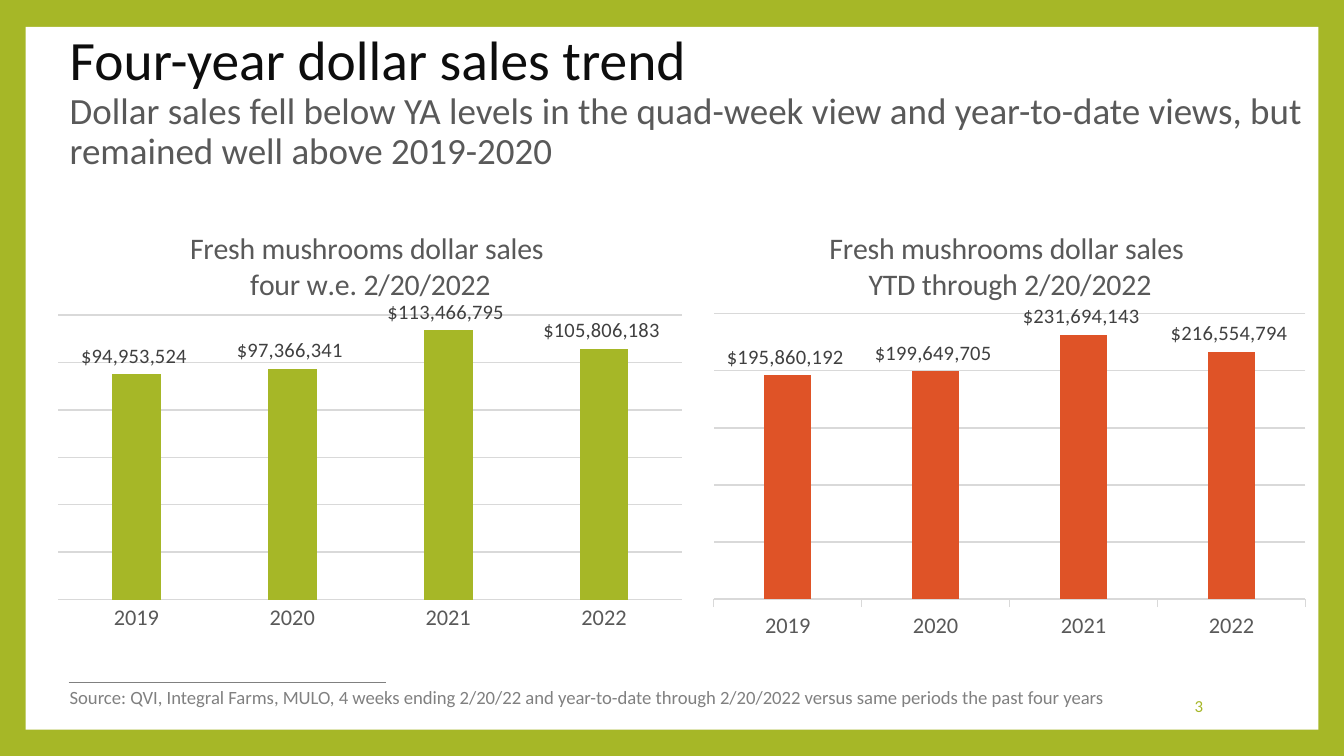
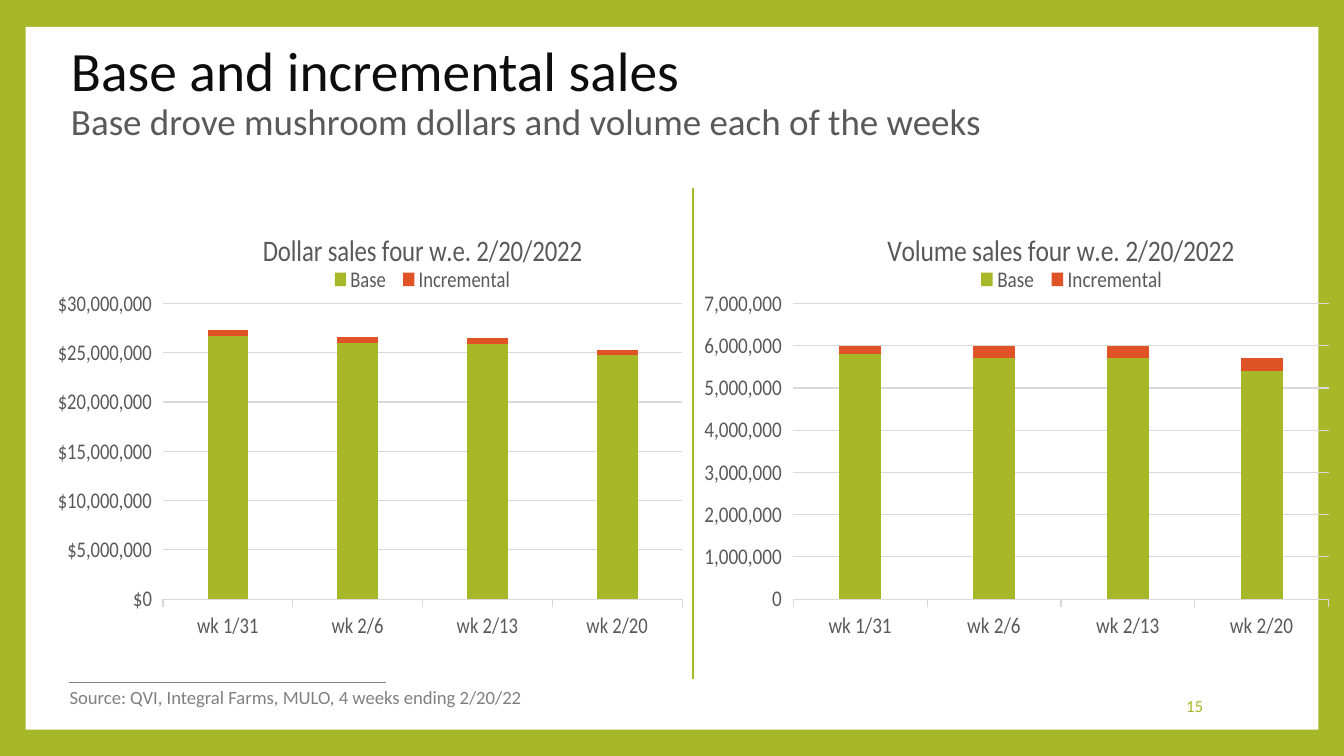
from lxml.etree import SubElement
from pptx import Presentation
from pptx.chart.data import CategoryChartData
from pptx.dml.color import RGBColor
from pptx.enum.chart import XL_CHART_TYPE as ChartType
from pptx.enum.chart import XL_LABEL_POSITION as LabelPosition
from pptx.enum.chart import XL_LEGEND_POSITION as LegendPosition
from pptx.enum.chart import XL_TICK_MARK as TickMark
from pptx.enum.shapes import MSO_CONNECTOR as Connector
from pptx.enum.shapes import MSO_SHAPE as Preset
from pptx.enum.text import MSO_ANCHOR as Anchor
from pptx.enum.text import MSO_AUTO_SIZE as AutoSize
from pptx.enum.text import PP_ALIGN as Align
from pptx.oxml import parse_xml
from pptx.oxml.ns import nsdecls, qn
from pptx.util import Emu, Pt

EMU_PER_PX = 4572  # 200 px to the inch
FONT = "Calibri"
COLORS = {
    "green": "A6B727",
    "orange": "DF5327",
    "white": "FFFFFF",
    "heading": "0D0D0D",
    "text": "595959",
    "label": "404040",
    "source": "808080",
    "grid": "D9D9D9",
}
CHART_TOP, CHART_HEIGHT = 310, 662
DOLLARS = '"$"#,##0_);[Red]\\("$"#,##0\\)'
YEARS = ["2019", "2020", "2021", "2022"]
WEEKS = ["wk 1/31", "wk 2/6", "wk 2/13", "wk 2/20"]


def px(length):
    return Emu(length * EMU_PER_PX)


def rgb(name):
    return RGBColor.from_string(COLORS[name])


def style_font(font, size, color):
    font.name = FONT
    font.size = Pt(size)
    font.bold = False
    font.color.rgb = rgb(color)


def style_line(line, color, width):
    line.color.rgb = rgb(color)
    line.width = Pt(width)


def manual_layout(box, inner=False):
    """Return a layout element that places a chart part by fractions of the chart."""
    layout = parse_xml(f"<c:layout {nsdecls('c')}/>")
    manual = SubElement(layout, qn("c:manualLayout"))
    settings = [("layoutTarget", "inner")] if inner else []
    settings += [("xMode", "edge"), ("yMode", "edge"), *zip("xywh", box)]
    for tag, value in settings:
        SubElement(manual, qn(f"c:{tag}")).set("val", str(value))
    return layout


def set_plot_layout(chart, box):
    """Place the inner plot area and clear the chart background."""
    plot_area = chart.element.find(".//" + qn("c:plotArea"))
    for layout in plot_area.findall(qn("c:layout")):
        plot_area.remove(layout)
    plot_area.insert(0, manual_layout(box, inner=True))
    chart.element.find(qn("c:chart")).addnext(
        parse_xml(f"<c:spPr {nsdecls('c', 'a')}><a:noFill/><a:ln><a:noFill/></a:ln></c:spPr>"))


def set_legend_layout(chart, box):
    legend = chart.element.find(".//" + qn("c:legend"))
    for layout in legend.findall(qn("c:layout")):
        legend.remove(layout)
    legend.find(qn("c:legendPos")).addnext(manual_layout(box))


class Deck:
    """Holds the shared style and the slide being filled."""

    def __init__(self):
        self.presentation = Presentation()
        self.presentation.slide_width = px(2000)
        self.presentation.slide_height = px(1125)
        self.slide = None

    def add_slide(self, number, heading, subheading, source, title_box, source_width):
        self.slide = self.presentation.slides.add_slide(self.presentation.slide_layouts[6])
        background = self.slide.background.fill
        background.solid()
        background.fore_color.rgb = rgb("green")
        self.panel(38, 40, 1924, 1046)
        self.line((102, 1016), (574, 1016), "source")
        self.title(title_box, heading, subheading)
        self.text((1530, 1021, 280, 60), str(number), 9, "green", Align.RIGHT, Anchor.MIDDLE)
        note = self.text((84, 1011, source_width, 54), source, 10, "source")
        note.word_wrap = False
        note.auto_size = AutoSize.SHAPE_TO_FIT_TEXT

    def panel(self, left, top, width, height):
        shape = self.slide.shapes.add_shape(
            Preset.RECTANGLE, px(left), px(top), px(width), px(height))
        shape.shadow.inherit = False
        shape.fill.solid()
        shape.fill.fore_color.rgb = rgb("white")
        shape.line.fill.background()

    def line(self, start, end, color):
        connector = self.slide.shapes.add_connector(
            Connector.STRAIGHT, *map(px, start + end))
        style_line(connector.line, color, 0.79)
        SubElement(connector.element.spPr, qn("a:effectLst"))

    def text(self, box, text, size, color, align=Align.LEFT, anchor=Anchor.TOP):
        text_frame = self.slide.shapes.add_textbox(*map(px, box)).text_frame
        text_frame.word_wrap = True
        text_frame.vertical_anchor = anchor
        text_frame.text = text
        paragraph = text_frame.paragraphs[0]
        paragraph.alignment = align
        for run in paragraph.runs:
            style_font(run.font, size, color)
        return text_frame

    def title(self, box, heading, subheading):
        text_frame = self.text(box, f"{heading}\v{subheading}", 19.8, "text",
                               anchor=Anchor.MIDDLE)
        paragraph = text_frame.paragraphs[0]
        paragraph.line_spacing = 0.9
        style_font(paragraph.runs[0].font, 29.7, "heading")

    def chart(self, kind, left, width, title, categories, series, plot_box, number_format):
        """Add a column chart; series is a list of (name, values, color)."""
        data = CategoryChartData()
        data.categories = categories
        for name, values, _ in series:
            data.add_series(name, values)
        chart = self.slide.shapes.add_chart(
            kind, px(left), px(CHART_TOP), px(width), px(CHART_HEIGHT), data).chart
        style_font(chart.font, 10, "heading")
        chart.has_legend = False
        chart.has_title = True
        title_frame = chart.chart_title.text_frame
        title_frame.text = title
        for paragraph in title_frame.paragraphs:
            style_font(paragraph.runs[0].font, 16, "text")
        chart.chart_title.include_in_layout = False

        plot = chart.plots[0]
        plot.gap_width = 219
        plot.vary_by_categories = False
        for drawn, (_, _, color) in zip(plot.series, series):
            drawn.format.fill.solid()
            drawn.format.fill.fore_color.rgb = rgb(color)
            drawn.invert_if_negative = False

        style_font(chart.category_axis.tick_labels.font, 12, "text")
        style_line(chart.category_axis.format.line, "grid", 0.75)
        chart.category_axis.major_tick_mark = TickMark.OUTSIDE
        axis = chart.value_axis
        axis.minimum_scale = 0
        axis.has_major_gridlines = True
        style_line(axis.major_gridlines.format.line, "grid", 0.75)
        axis.tick_labels.number_format = number_format
        axis.tick_labels.number_format_is_linked = False
        set_plot_layout(chart, plot_box)
        return chart

    def labelled_chart(self, left, width, title, values, color, plot_box):
        """Add yearly columns with value labels and no value axis."""
        chart = self.chart(ChartType.COLUMN_CLUSTERED, left, width, title, YEARS,
                           [("Series 1", values, color)], plot_box, DOLLARS)
        chart.value_axis.visible = False
        plot = chart.plots[0]
        plot.overlap = -27
        plot.has_data_labels = True
        labels = plot.data_labels
        labels.show_value = True
        labels.position = LabelPosition.OUTSIDE_END
        labels.number_format = DOLLARS
        labels.number_format_is_linked = False
        style_font(labels.font, 11, "label")
        return chart

    def stacked_chart(self, left, title, base, incremental, number_format, legend_left):
        """Add weekly base and incremental columns with a legend and value axis."""
        series = [("Base", base, "green"), ("Incremental", incremental, "orange")]
        chart = self.chart(ChartType.COLUMN_STACKED, left, 930, title, WEEKS, series,
                           (0, 0.214, 1, 0.665), number_format)
        chart.plots[0].overlap = 100
        chart.has_legend = True
        chart.legend.position = LegendPosition.TOP
        chart.legend.include_in_layout = False
        style_font(chart.legend.font, 12, "text")
        set_legend_layout(chart, (legend_left, 0.12, 0.38, 0.08))
        style_font(chart.value_axis.tick_labels.font, 12, "text")
        chart.value_axis.major_tick_mark = TickMark.OUTSIDE
        chart.value_axis.format.line.fill.background()


def add_sales_trend(deck):
    deck.add_slide(
        3, "Four-year dollar sales trend",
        "Dollar sales fell below YA levels in the quad-week view and year-to-date views, "
        "but remained well above 2019-2020",
        "Source: QVI, Integral Farms, MULO, 4 weeks ending 2/20/22 and year-to-date "
        "through 2/20/2022 versus same periods the past four years",
        (84, 74, 1890, 158), 1624)
    four_weeks = deck.labelled_chart(
        86, 930, "Fresh mushrooms dollar sales \nfour w.e. 2/20/2022",
        [94953524, 97366341, 113466795, 105806183], "green", (0, 0.24, 1, 0.64))
    four_weeks.category_axis.major_tick_mark = TickMark.NONE
    deck.labelled_chart(
        1032, 942, "Fresh mushrooms dollar sales \nYTD through 2/20/2022",
        [195860192, 199649705, 231694143, 216554794], "orange",
        (0.032, 0.237, 0.935, 0.642))


def add_base_and_incremental(deck):
    deck.add_slide(
        15, "Base and incremental sales",
        "Base drove mushroom dollars and volume each of the weeks",
        "Source: QVI, Integral Farms, MULO, 4 weeks ending 2/20/22",
        (86, 60, 1968, 158), 768)
    deck.line((1031, 280), (1031, 1010), "green")
    deck.stacked_chart(86, "Dollar sales four w.e. 2/20/2022",
                       [26700000, 26000000, 25900000, 24800000],
                       [600000, 600000, 600000, 500000], "\\$#,##0", 0.31)
    deck.stacked_chart(1048, "Volume sales four w.e. 2/20/2022",
                       [5800000, 5700000, 5700000, 5400000],
                       [200000, 300000, 300000, 300000], "#,##0", 0.33)


def main():
    deck = Deck()
    add_sales_trend(deck)
    add_base_and_incremental(deck)
    deck.presentation.save("out.pptx")


if __name__ == "__main__":
    main()
